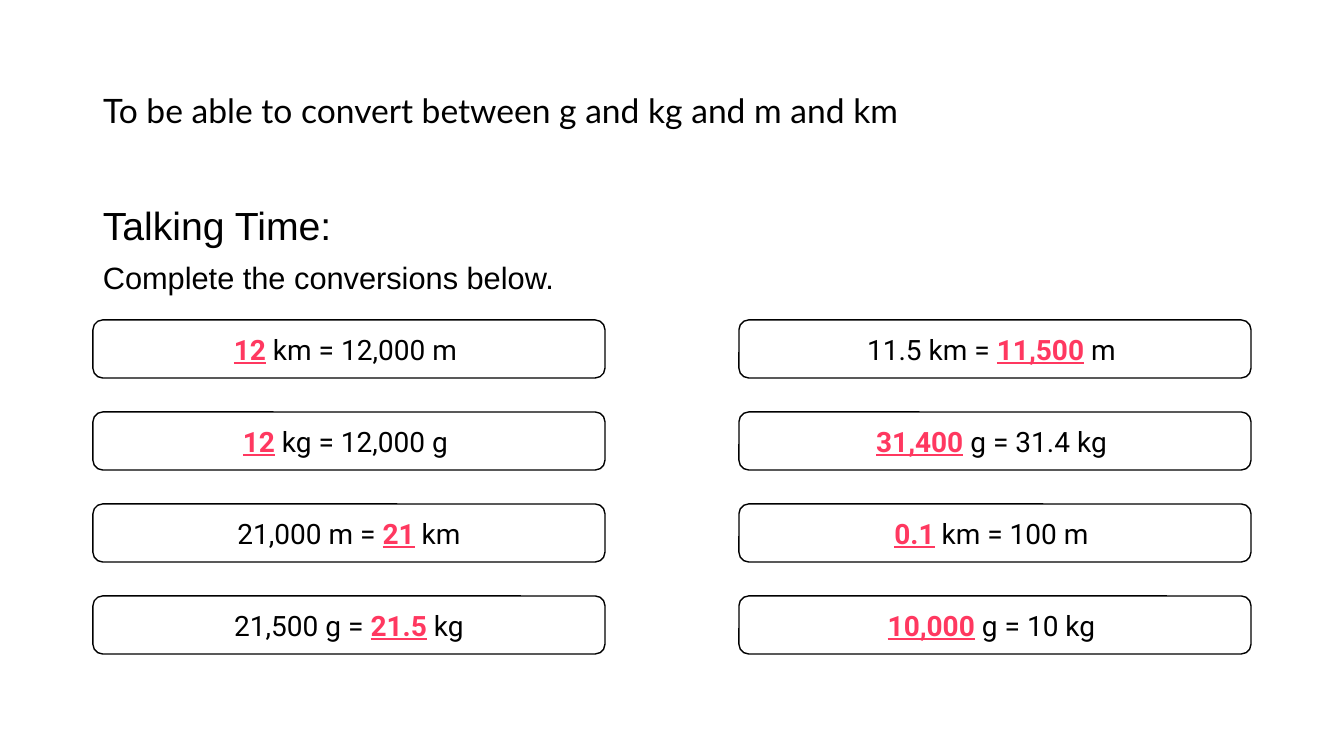
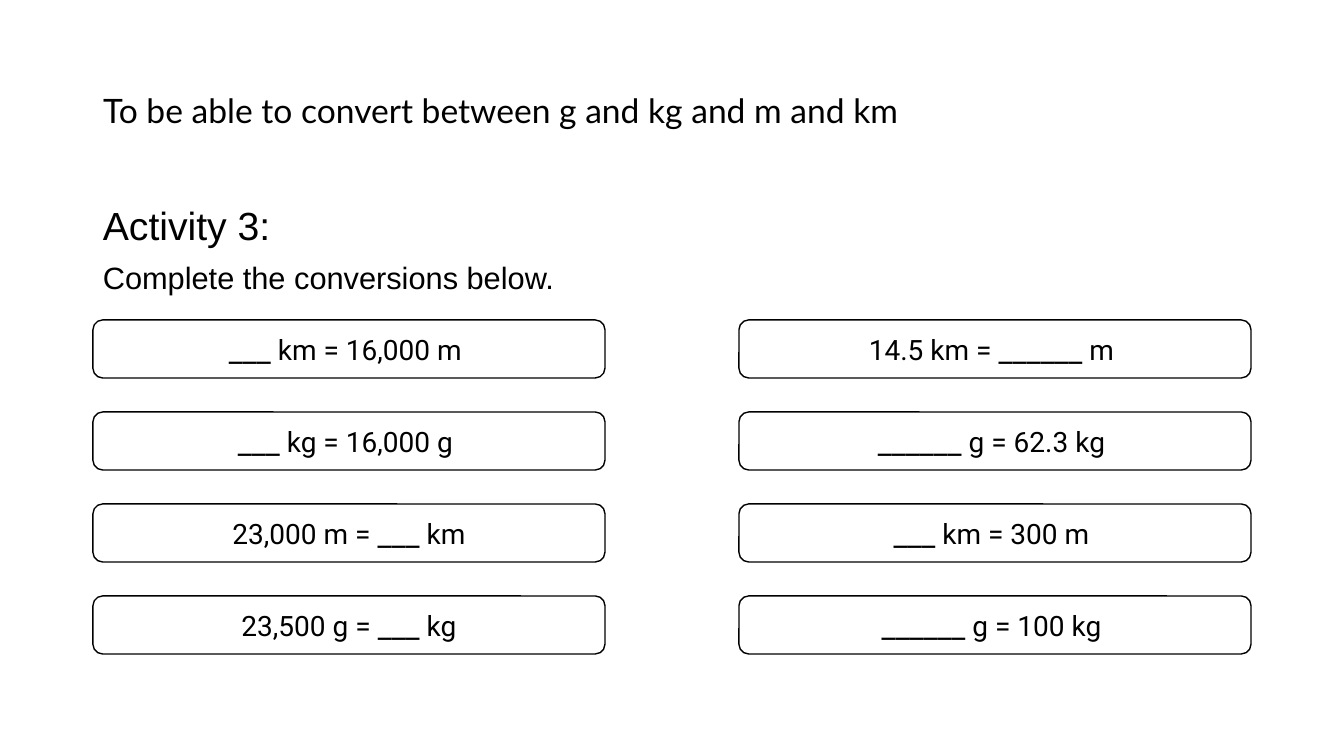
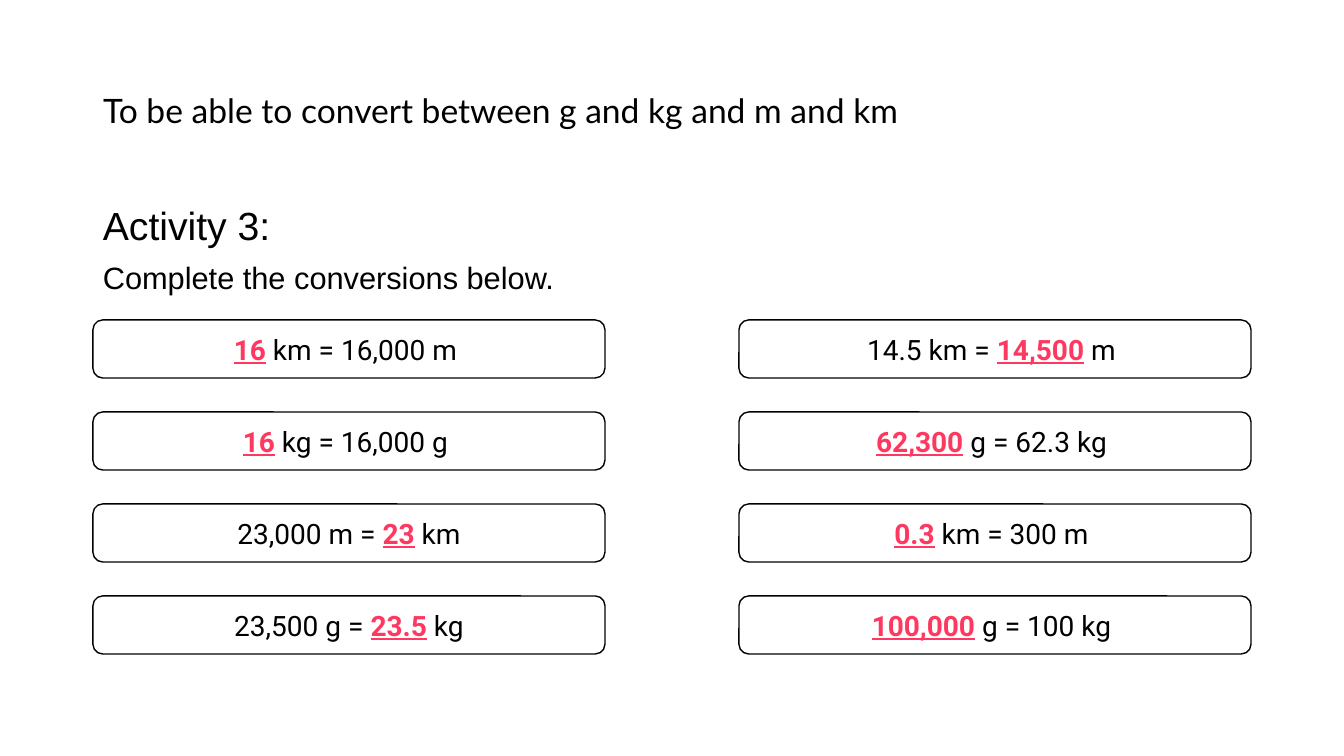
from dataclasses import dataclass

from pptx import Presentation
from pptx.dml.color import RGBColor
from pptx.enum.shapes import MSO_SHAPE
from pptx.enum.text import MSO_ANCHOR, MSO_AUTO_SIZE, PP_ALIGN
from pptx.util import Pt

CARD = MSO_SHAPE.ROUNDED_RECTANGLE
MIDDLE, TOP = MSO_ANCHOR.MIDDLE, MSO_ANCHOR.TOP
LEFT, CENTER, JUSTIFY = PP_ALIGN.LEFT, PP_ALIGN.CENTER, PP_ALIGN.JUSTIFY
NO_FIT = MSO_AUTO_SIZE.NONE
TITLE_ONLY = 5
SCALE = 914400 / 100.8


@dataclass(frozen=True)
class Theme:
    ink: RGBColor = RGBColor(0, 0, 0)
    paper: RGBColor = RGBColor(255, 255, 255)
    answer: RGBColor = RGBColor(0xFF, 0x38, 0x60)
    title: tuple = ("Lato", 24)
    head: tuple = ("Arial", 28)
    task: tuple = ("Arial", 22)
    sum: tuple = ("Roboto", 20)
    blank: tuple = ("Calibri", 20)


THEME = Theme()

AIM = "To be able to convert between g and kg and m and km"
TASK = "Complete the conversions below."

# Each column of cards from top to bottom; bars enclose the answer.
TALK = (
    ("|12| km = 12,000 m ", "|12| kg = 12,000 g ",
     "21,000 m = |21| km", "21,500 g = |21.5| kg"),
    ("11.5 km = |11,500| m ", "|31,400| g = 31.4 kg ",
     "|0.1| km = 100 m ", "|10,000| g = 10 kg "),
)
ACTIVITY = (
    ("|16| km = 16,000 m ", "|16| kg = 16,000 g ",
     "23,000 m = |23| km", "23,500 g = |23.5| kg"),
    ("14.5 km = |14,500| m ", "|62,300| g = 62.3 kg ",
     "|0.3| km = 300 m ", "|100,000| g = 100 kg "),
)


def px(value):
    return round(value * SCALE)


def box(*sides):
    return [px(side) for side in sides]


def apply(target, form):
    for name, value in form.items():
        setattr(target, name, value)


def add_run(para, text, style, color=THEME.ink, **form):
    run = para.add_run()
    run.text = text
    face, size = style
    apply(run.font, {"name": face, "size": Pt(size), "bold": False, **form})
    run.font.color.rgb = color


def add_title(slide):
    title = slide.shapes.title
    names = ("left", "top", "width", "height")
    apply(title, dict(zip(names, box(93, 40, 968, 146))))
    frame = title.text_frame
    apply(frame, {"word_wrap": True, "vertical_anchor": MIDDLE,
                  "auto_size": NO_FIT})
    para = frame.paragraphs[0]
    apply(para, {"alignment": LEFT, "line_spacing": 0.9})
    add_run(para, AIM, THEME.title)


def add_intro(slide, head):
    frame = slide.shapes.add_textbox(*box(93, 202, 1200, 106)).text_frame
    apply(frame, {"word_wrap": True, "vertical_anchor": TOP})
    first, second = frame.paragraphs[0], frame.add_paragraph()
    for para in (first, second):
        apply(para, {"alignment": JUSTIFY, "line_spacing": 0.9})
    second.space_before = Pt(10)
    add_run(first, head, THEME.head)
    add_run(second, TASK, THEME.task)


def add_gap(para, answer, solved):
    """Show the answer, or a blank line that is longer for thousands."""
    if solved:
        add_run(para, answer, THEME.sum, THEME.answer,
                bold=True, underline=True)
    else:
        add_run(para, "_" * (6 if "," in answer else 3), THEME.blank,
                bold=True)


def add_card(slide, left, top, text, solved):
    card = slide.shapes.add_shape(CARD, *box(left, top, 512, 58))
    card.shadow.inherit = False
    card.fill.solid()
    card.fill.fore_color.rgb = THEME.paper
    card.line.color.rgb = THEME.ink
    card.line.width = Pt(1)
    frame = card.text_frame
    apply(frame, {"word_wrap": True, "vertical_anchor": MIDDLE})
    para = frame.paragraphs[0]
    para.alignment = CENTER
    before, answer, after = text.split("|")
    if before:
        add_run(para, before, THEME.sum)
    add_gap(para, answer, solved)
    add_run(para, after, THEME.sum)


def add_page(deck, head, sums, solved):
    slide = deck.slides.add_slide(deck.slide_layouts[TITLE_ONLY])
    add_title(slide)
    add_intro(slide, head)
    for col, column in enumerate(sums):
        for row, text in enumerate(column):
            add_card(slide, 93 + 646 * col, 320 + 92 * row, text, solved)


def main():
    deck = Presentation()
    apply(deck, {"slide_width": px(1344), "slide_height": px(756)})
    add_page(deck, "Talking Time:", TALK, True)
    add_page(deck, "Activity 3:", ACTIVITY, False)
    add_page(deck, "Activity 3:", ACTIVITY, True)
    deck.save("out.pptx")


if __name__ == "__main__":
    main()
